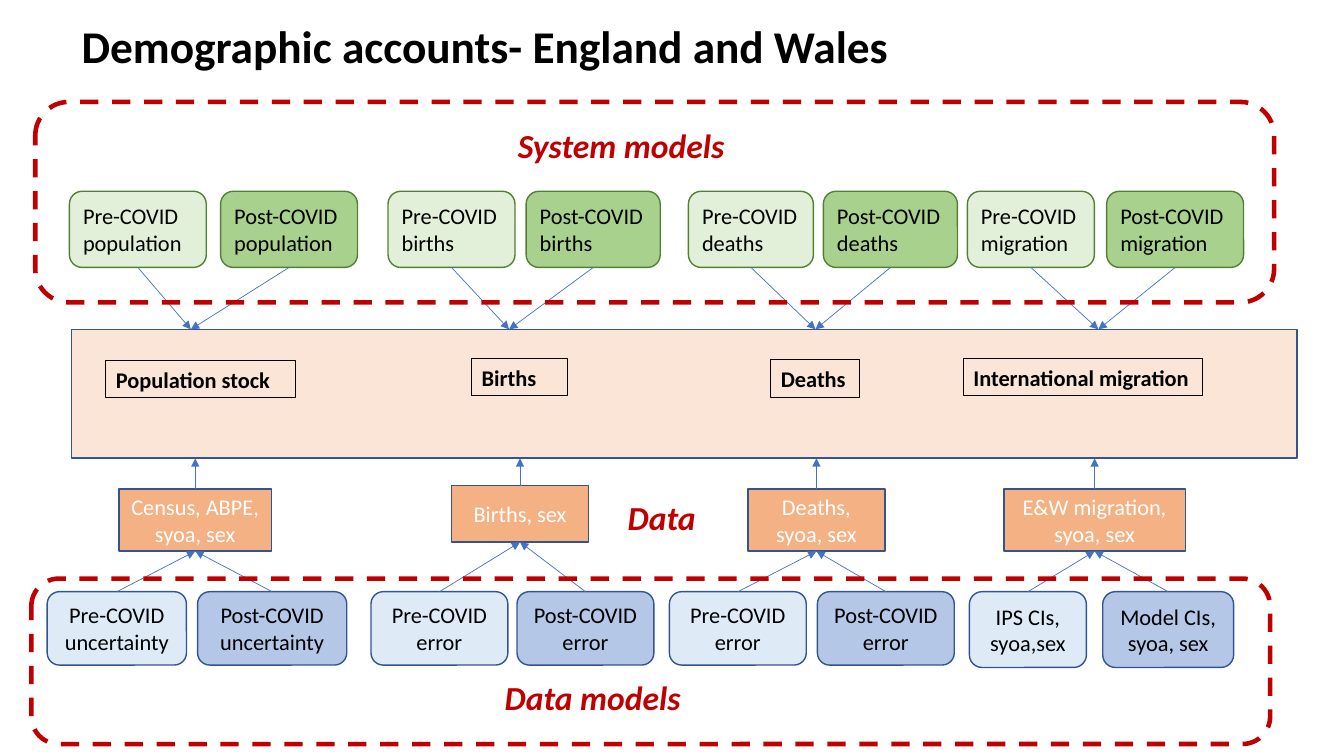
"""Build the slide on demographic accounts for England and Wales."""
from lxml.etree import SubElement
from pptx import Presentation
from pptx.dml.color import RGBColor
from pptx.enum.dml import MSO_LINE_DASH_STYLE as Dash
from pptx.enum.shapes import MSO_CONNECTOR as Link, MSO_SHAPE as Shape
from pptx.enum.text import MSO_ANCHOR as Anchor, MSO_AUTO_SIZE as Fit, PP_ALIGN as Align
from pptx.oxml.ns import qn
from pptx.util import Cm, Pt

TITLE = "Demographic accounts- England and Wales"
TITLE_AREA = (1.8, 0.61, 29.21, 1.96)
ACCOUNTS_AREA = (1.8, 8.31, 30.89, 3.23)
MODEL_AREAS = [(0.89, 2.57, 31.22, 5.05), (0.79, 14.58, 31.22, 4.17)]
HEADINGS = [
    ("System models", (12.8, 3.02, 6.12, 1.27)),
    ("Data models", (12.47, 16.94, 6.12, 1.27)),
    ("Data", (15.57, 12.4, 2.72, 1.27)),
]
SYSTEM_TOP, SYSTEM_HEIGHT = 4.82, 1.92
ERROR_TOP = 14.91
SYSTEM_ARROW_END, DATA_ARROW_END = 8.3, 11.55

COLUMNS = [
    {
        "system": [("Pre-COVID population", 1.75, 3.45), ("Post-COVID population", 5.56, 3.45)],
        "target": 4.81,
        "account": ("Population stock", (2.67, 9.09, 4.78, 0.94)),
        "data": ("Census, ABPE, syoa, sex", (3, 12.32, 3.84, 1.57)),
        "errors": [("Pre-COVID uncertainty", 1.19, 3.51), ("Post-COVID uncertainty", 4.98, 3.76)],
        "error_height": 1.85,
    },
    {
        "system": [("Pre-COVID births", 9.78, 3.2), ("Post-COVID births", 13.26, 3.38)],
        "target": 12.83,
        "account": ("Births", (11.89, 9.04, 2.41, 0.94)),
        "data": ("Births, sex", (11.38, 12.24, 3.45, 1.42)),
        "errors": [("Pre-COVID error", 9.35, 3.45), ("Post-COVID error", 13.03, 3.45)],
        "error_height": 1.85,
    },
    {
        "system": [("Pre-COVID deaths", 17.35, 3.15), ("Post-COVID deaths", 20.75, 3.38)],
        "target": 20.55,
        "account": ("Deaths", (19.43, 9.07, 2.24, 0.94)),
        "data": ("Deaths, syoa, sex", (18.85, 12.32, 3.45, 1.57)),
        "errors": [("Pre-COVID error", 16.87, 3.45), ("Post-COVID error", 20.6, 3.45)],
        "error_height": 1.85,
    },
    {
        "system": [("Pre-COVID migration", 24.38, 3.2), ("Post-COVID migration", 27.89, 3.45)],
        "target": 27.68,
        "account": ("International migration", (24.28, 9.04, 6.02, 0.94)),
        "data": ("E&W migration, syoa, sex", (25.3, 12.32, 4.57, 1.57)),
        "errors": [("IPS CIs, syoa,sex", 24.43, 2.95), ("Model CIs, syoa, sex", 27.79, 3.3)],
        "error_height": 1.91,
    },
]

COLORS = {
    "black": "000000", "white": "FFFFFF", "red": "C00000", "navy": "325491",
    "arrow": "4472C4", "peach": "FBE5D6", "orange": "F4B183", "green": "538035",
    "pre_system": "E2F0D9", "post_system": "A9D18E",
    "pre_error": "DEEBF7", "post_error": "B4C7E7",
}
TITLE_FONT = {"name": "Calibri", "size": Pt(32.4), "bold": True}
HEADING_FONT = {"name": "Calibri", "size": Pt(24), "bold": True, "italic": True}
ACCOUNT_FONT = {"name": "Calibri", "size": Pt(16), "bold": True}
BOX_FONT = {"name": "Calibri", "size": Pt(16), "bold": False}


def color(name):
    return RGBColor.from_string(COLORS[name])


def lengths(area):
    return [Cm(value) for value in area]


def apply(target, formats):
    for name, value in formats.items():
        setattr(target, name, value)


def write(holder, text, font, ink="black", align=Align.LEFT, anchor=Anchor.MIDDLE):
    frame = holder.text_frame
    frame.text = text
    apply(frame, {"word_wrap": True, "auto_size": Fit.NONE, "vertical_anchor": anchor})
    paragraph = frame.paragraphs[0]
    paragraph.alignment = align
    run_font = paragraph.runs[0].font
    apply(run_font, font)
    run_font.color.rgb = color(ink)


def add_box(slide, kind, area, fill, outline, width=1):
    box = slide.shapes.add_shape(kind, *lengths(area))
    box.shadow.inherit = False
    if fill:
        box.fill.solid()
        box.fill.fore_color.rgb = color(fill)
    else:
        box.fill.background()
    box.line.color.rgb = color(outline)
    box.line.width = Pt(width)
    return box


def add_arrow(slide, source, side, end):
    arrow = slide.shapes.add_connector(Link.STRAIGHT, 0, 0, *lengths(end))
    arrow.begin_connect(source, side)
    arrow.line.color.rgb = color("arrow")
    arrow.line.width = Pt(0.5)
    SubElement(arrow.line._get_or_add_ln(), qn("a:tailEnd"), type="triangle")
    SubElement(arrow._element.spPr, qn("a:effectLst"))
    return arrow


def add_column(slide, column):
    account, account_area = column["account"]
    label = add_box(slide, Shape.RECTANGLE, account_area, None, "black", 0.75)
    write(label, account, ACCOUNT_FONT, anchor=Anchor.TOP)

    data, data_area = column["data"]
    left, top, width, height = data_area
    middle = left + width / 2
    data_box = add_box(slide, Shape.RECTANGLE, data_area, "orange", "navy")
    write(data_box, data, BOX_FONT, "white", Align.CENTER)
    add_arrow(slide, data_box, 0, (middle, DATA_ARROW_END))

    for (text, box_left, box_width), fill in zip(column["system"], ("pre_system", "post_system")):
        area = (box_left, SYSTEM_TOP, box_width, SYSTEM_HEIGHT)
        system_box = add_box(slide, Shape.ROUNDED_RECTANGLE, area, fill, "green")
        write(system_box, text, BOX_FONT)
        add_arrow(slide, system_box, 2, (column["target"], SYSTEM_ARROW_END))

    for (text, box_left, box_width), fill in zip(column["errors"], ("pre_error", "post_error")):
        area = (box_left, ERROR_TOP, box_width, column["error_height"])
        error_box = add_box(slide, Shape.ROUNDED_RECTANGLE, area, fill, "navy")
        write(error_box, text, BOX_FONT, align=Align.CENTER)
        add_arrow(slide, error_box, 0, (middle, top + height)).end_connect(data_box, 2)


def main():
    deck = Presentation()
    apply(deck, {"slide_width": Cm(33.87), "slide_height": Cm(19.05)})
    slide = deck.slides.add_slide(deck.slide_layouts[5])

    title = slide.shapes.title
    apply(title, dict(zip(("left", "top", "width", "height"), lengths(TITLE_AREA))))
    write(title, TITLE, TITLE_FONT, anchor=Anchor.TOP)
    title.text_frame.margin_top = 0
    title.text_frame.paragraphs[0].line_spacing = 0.9

    add_box(slide, Shape.RECTANGLE, ACCOUNTS_AREA, "peach", "navy")
    for column in COLUMNS:
        add_column(slide, column)
    for area in MODEL_AREAS:
        models = add_box(slide, Shape.ROUNDED_RECTANGLE, area, None, "red", 3.25)
        models.line.dash_style = Dash.DASH
    for text, area in HEADINGS:
        heading = slide.shapes.add_textbox(*lengths(area))
        write(heading, text, HEADING_FONT, "red", anchor=Anchor.TOP)

    deck.save("out.pptx")


if __name__ == "__main__":
    main()
